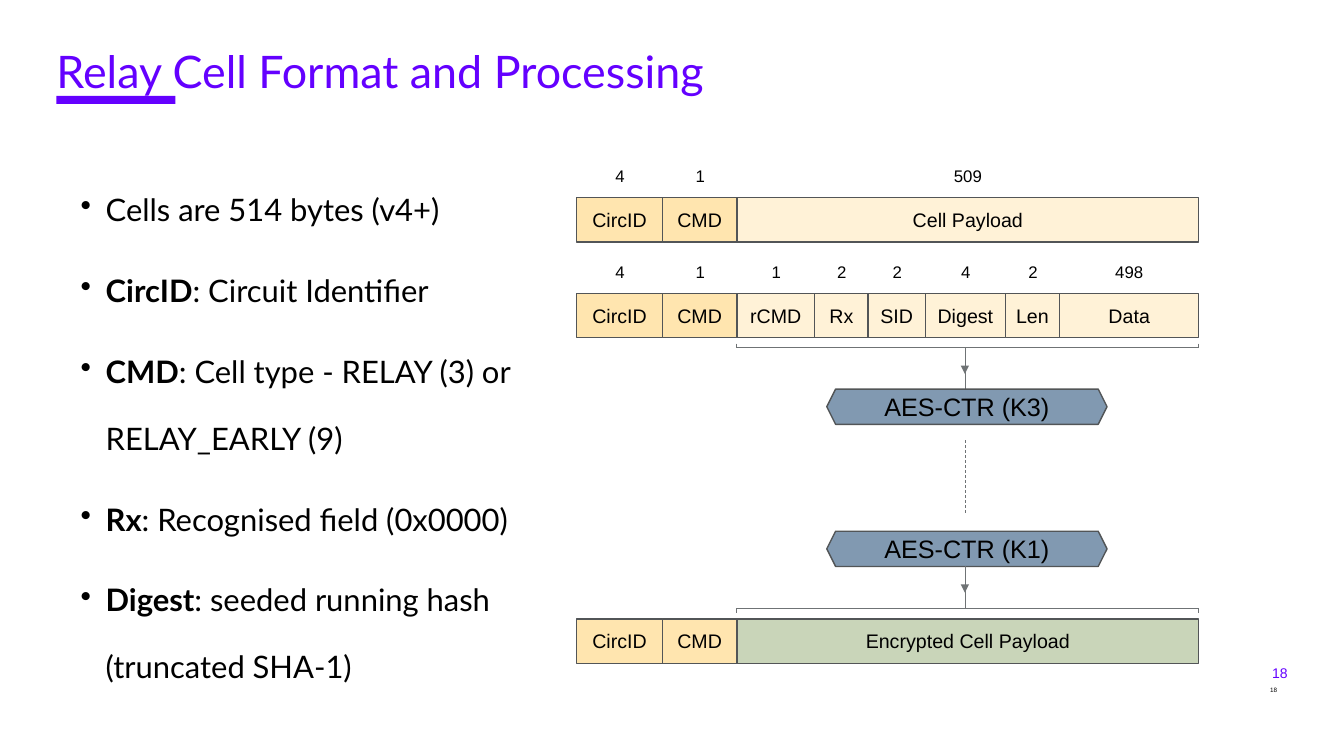
from lxml import etree
from pptx import Presentation
from pptx.dml.color import RGBColor
from pptx.enum.dml import MSO_LINE
from pptx.enum.shapes import MSO_CONNECTOR, MSO_SHAPE
from pptx.enum.text import MSO_ANCHOR, PP_ALIGN
from pptx.oxml.ns import qn
from pptx.util import Inches, Pt

RECTANGLE, HEXAGON = MSO_SHAPE.RECTANGLE, MSO_SHAPE.HEXAGON
STRAIGHT, DASH = MSO_CONNECTOR.STRAIGHT, MSO_LINE.DASH
LEFT, CENTER, RIGHT = PP_ALIGN.LEFT, PP_ALIGN.CENTER, PP_ALIGN.RIGHT
TOP, MIDDLE = MSO_ANCHOR.TOP, MSO_ANCHOR.MIDDLE

VIOLET, BLACK, OUTLINE, GREY = "6400FF", "000000", "525557", "6F7375"
HEADER, PAYLOAD, ENCRYPTED, CIPHER = "FFE5AF", "FFF2D7", "C9D5B9", "8199B1"

HEADER_FIELDS = [("CircID", "4", 0.85, HEADER), ("CMD", "1", 0.74, HEADER)]
CELL_FIELDS = HEADER_FIELDS + [("Cell Payload", "509", 4.58, PAYLOAD)]
RELAY_FIELDS = HEADER_FIELDS + [
    ("rCMD", "1", 0.77, PAYLOAD),
    ("Rx", "2", 0.53, PAYLOAD),
    ("SID", "2", 0.57, PAYLOAD),
    ("Digest", "4", 0.79, PAYLOAD),
    ("Len", "2", 0.54, PAYLOAD),
    ("Data", "498", 1.38, PAYLOAD),
]
ENCRYPTED_FIELDS = [(name, "", width, fill) for name, _, width, fill in HEADER_FIELDS]
ENCRYPTED_FIELDS.append(("Encrypted Cell Payload", "", 4.58, ENCRYPTED))
POINTS = [
    ("", "Cells are 514 bytes (v4+)"),
    ("CircID", ": Circuit Identifier"),
    ("CMD", ": Cell type - RELAY (3) or RELAY_EARLY (9)"),
    ("Rx", ": Recognised field (0x0000)"),
    ("Digest", ": seeded running hash (truncated SHA-1)"),
]


def color(hex_value):
    """Turn a hex string into a colour."""
    return RGBColor.from_string(hex_value)


def style(paragraph, size, hex_value=BLACK, font="Arial"):
    """Set the font of a whole paragraph."""
    paragraph.font.size = Pt(size)
    paragraph.font.name = font
    paragraph.font.color.rgb = color(hex_value)


def set_insets(frame, inset_x, inset_y):
    """Set the inner margins of a text frame."""
    frame.margin_left = frame.margin_right = Inches(inset_x)
    frame.margin_top = frame.margin_bottom = Inches(inset_y)


def add_text(slide, box, text, size, hex_value=BLACK, font="Arial",
             align=LEFT, anchor=TOP, insets=(0, 0), wrap=True):
    """Place one line of text and return its paragraph."""
    frame = slide.shapes.add_textbox(*map(Inches, box)).text_frame
    frame.word_wrap = wrap
    frame.vertical_anchor = anchor
    set_insets(frame, *insets)
    paragraph = frame.paragraphs[0]
    paragraph.text = text
    paragraph.alignment = align
    style(paragraph, size, hex_value, font)
    return paragraph


def add_block(slide, preset, box, fill, text="", size=14, outline=OUTLINE):
    """Place a filled shape with a centred label."""
    block = slide.shapes.add_shape(preset, *map(Inches, box))
    block.shadow.inherit = False
    block.fill.solid()
    block.fill.fore_color.rgb = color(fill)
    if outline:
        block.line.color.rgb = color(outline)
        block.line.width = Pt(1)
    else:
        block.line.fill.background()
    if text:
        frame = block.text_frame
        set_insets(frame, 0, 0)
        frame.vertical_anchor = MIDDLE
        label = frame.paragraphs[0]
        label.text = text
        label.alignment = CENTER
        style(label, size)


def add_line(slide, x1, y1, x2, y2, dash=None, arrow=False):
    """Draw a thin grey line, dashed or with an arrowhead if asked."""
    line = slide.shapes.add_connector(STRAIGHT, *map(Inches, (x1, y1, x2, y2)))
    line.line.color.rgb = color(GREY)
    line.line.width = Pt(0.5)
    if dash:
        line.line.dash_style = dash
    properties = line._element.spPr
    if arrow:
        etree.SubElement(properties.find(qn("a:ln")), qn("a:tailEnd"), type="triangle")
    etree.SubElement(properties, qn("a:effectLst"))


def add_title(slide, left, top, width, height):
    """Place the title and the accent bar below its first word."""
    add_block(slide, RECTANGLE, (left, top + 0.46, 1.18, 0.08), VIOLET, outline=None)
    title = add_text(slide, (left, top, width, height),
                     "Relay Cell Format and Processing", 32, VIOLET, "Lato")
    title.line_spacing = 0.9


def add_points(slide, *box):
    """Place the bullet list that explains the fields."""
    frame = slide.shapes.add_textbox(*map(Inches, box)).text_frame
    frame.word_wrap = True
    for index, (term, explanation) in enumerate(POINTS):
        point = frame.paragraphs[0] if index == 0 else frame.add_paragraph()
        properties = point._p.get_or_add_pPr()
        properties.set("marL", str(Inches(0.25)))
        properties.set("indent", str(-Inches(0.25)))
        etree.SubElement(properties, qn("a:buChar"), char="•")
        point.line_spacing = 1.8
        if index:
            point.space_before = Pt(10)
        if term:
            name = point.add_run()
            name.text = term
            name.font.bold = True
        point.add_run().text = explanation
        style(point, 22.1, font="Lato")


def add_cell_row(slide, left, top, height, fields):
    """Place adjoining fields with their byte counts centred above."""
    for name, byte_count, width, fill in fields:
        add_block(slide, RECTANGLE, (left, top, width, height), fill, name)
        if byte_count:
            label_width = 0.18 + 0.1 * len(byte_count)
            label_left = left + (width - label_width) / 2
            add_text(slide, (label_left, top - 0.36, label_width, 0.3), byte_count, 12,
                     align=CENTER, insets=(0.1, 0.05), wrap=False)
        left += width


def add_bracket(slide, left, right, bar_y, tick_y):
    """Draw a flat bracket whose ticks end at tick_y."""
    add_line(slide, left, bar_y, right, bar_y)
    for x in (left, right):
        add_line(slide, x, tick_y, x, bar_y)


def add_flow_arrow(slide, x, top):
    """Draw a vertical arrow with its head midway."""
    add_line(slide, x, top, x, top + 0.26, arrow=True)
    add_line(slide, x, top + 0.2, x, top + 0.41)


def add_encryption(slide, left, top, right):
    """Place the cipher steps between the relay cell and the encrypted cell."""
    flow_x = left + 2.27
    add_bracket(slide, left, right, top + 0.04, top)
    add_flow_arrow(slide, flow_x, top + 0.04)
    for cipher_top, key in ((top + 0.45, "K3"), (top + 1.86, "K1")):
        add_block(slide, HEXAGON, (left + 0.9, cipher_top, 2.78, 0.35), CIPHER,
                  f"AES-CTR ({key})", 18)
    add_line(slide, flow_x, top + 0.96, flow_x, top + 1.7, dash=DASH)
    add_flow_arrow(slide, flow_x, top + 2.21)
    add_bracket(slide, left, right, top + 2.63, top + 2.67)


def add_page_numbers(slide, left, top, width, height):
    """Place the page number and its small repeat."""
    add_text(slide, (left, top, width, height), "18", 10, VIOLET,
             align=RIGHT, anchor=MIDDLE)
    add_text(slide, (left + 0.17, top + 0.16, width, height), "18", 4.5,
             insets=(0.1, 0.05))


def main():
    """Build the slide and save it."""
    deck = Presentation()
    deck.slide_width, deck.slide_height = Inches(13.33), Inches(7.5)
    slide = deck.slides.add_slide(deck.slide_layouts[6])
    add_title(slide, 0.56, 0.49, 9.56, 0.68)
    add_points(slide, 0.7, 1.55, 4.75, 5.37)
    for top, fields in ((1.96, CELL_FIELDS), (2.91, RELAY_FIELDS), (6.14, ENCRYPTED_FIELDS)):
        add_cell_row(slide, 5.72, top, 0.44, fields)
    add_encryption(slide, 7.3, 3.41, 11.89)
    add_page_numbers(slide, 12.33, 6.6, 0.44, 0.16)
    deck.save("out.pptx")


if __name__ == "__main__":
    main()
